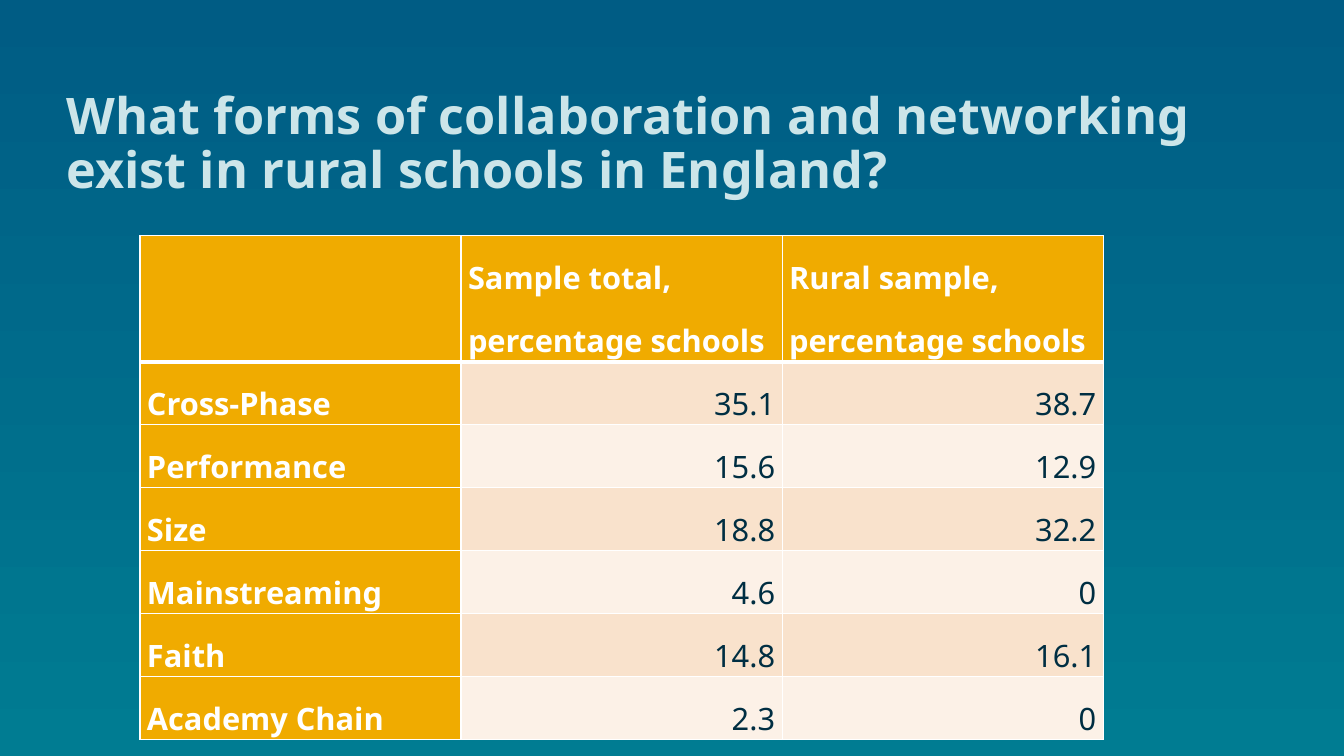
from lxml.etree import SubElement
from pptx import Presentation
from pptx.dml.color import RGBColor
from pptx.enum.text import MSO_ANCHOR, PP_ALIGN
from pptx.oxml.ns import qn
from pptx.util import Pt

FONT = "Noto Sans"
TOP = RGBColor(0x00, 0x5C, 0x84)
BASE = RGBColor(0x00, 0x7C, 0x92)
PALE = RGBColor(0xCC, 0xE5, 0xE9)
WHITE = RGBColor(0xFF, 0xFF, 0xFF)
INK = RGBColor(0x00, 0x2E, 0x42)
GOLD = RGBColor(0xF0, 0xAB, 0x00)
BANDS = [RGBColor(0xF9, 0xE2, 0xCC), RGBColor(0xFC, 0xF1, 0xE7)]

TITLE = "What forms of collaboration and networking exist in rural schools in England?"
ROWS = [
    ("", "Sample total, percentage schools", "Rural sample, percentage schools"),
    ("Cross-Phase", "35.1", "38.7"),
    ("Performance", "15.6", "12.9"),
    ("Size", "18.8", "32.2"),
    ("Mainstreaming", "4.6", "0"),
    ("Faith", "14.8", "16.1"),
    ("Academy Chain", "2.3", "0"),
]


def style(font, size, color, bold):
    font.name = FONT
    font.size = Pt(size)
    font.color.rgb = color
    font.bold = bold


def add_back(slide):
    fill = slide.background.fill
    fill.gradient()
    fill.gradient_angle = 270
    for stop, color, place in zip(fill.gradient_stops, (TOP, BASE), (0, 1)):
        stop.color.rgb = color
        stop.position = place


def add_title(slide, left, top, width, height):
    box = slide.shapes.add_textbox(Pt(left), Pt(top), Pt(width), Pt(height))
    frame = box.text_frame
    frame.word_wrap = True
    frame.vertical_anchor = MSO_ANCHOR.BOTTOM
    frame.margin_left = frame.margin_right = Pt(0)
    frame.margin_top = frame.margin_bottom = Pt(0)
    frame.text = TITLE
    para = frame.paragraphs[0]
    para.line_spacing = 0.9
    style(para.runs[0].font, 36, PALE, True)


def add_edges(cell, row):
    """Draw white cell borders, thick between the header and the body."""
    props = cell._tc.get_or_add_tcPr()
    for side in "LRTB":
        thick = (row, side) in ((0, "B"), (1, "T"))
        line = SubElement(props, qn(f"a:ln{side}"), w=str(Pt(3 if thick else 1)))
        fill = SubElement(line, qn("a:solidFill"))
        SubElement(fill, qn("a:srgbClr"), val=str(WHITE))


def fill_cell(cell, text, row, col):
    head = row == 0 or col == 0
    add_edges(cell, row)
    cell.fill.solid()
    cell.fill.fore_color.rgb = GOLD if head else BANDS[(row - 1) % 2]
    cell.margin_left = cell.margin_right = Pt(5)
    cell.margin_top = cell.margin_bottom = Pt(0)
    cell.text_frame.text = text
    para = cell.text_frame.paragraphs[0]
    para.line_spacing = 1.5
    para.alignment = PP_ALIGN.LEFT if head else PP_ALIGN.RIGHT
    for run in para.runs:
        style(run.font, 22, WHITE if head else INK, head)


def add_grid(slide, left, top, width, height):
    """Place the table; its header is as tall as two body rows."""
    count = len(ROWS[0])
    frame = slide.shapes.add_table(
        len(ROWS), count, Pt(left), Pt(top), Pt(width), Pt(height))
    table = frame.table
    for col in table.columns:
        col.width = Pt(width / count)
    unit = height / (len(ROWS) + 1)
    for r, texts in enumerate(ROWS):
        table.rows[r].height = Pt(unit * (2 if r == 0 else 1))
        for c, text in enumerate(texts):
            fill_cell(table.cell(r, c), text, r, c)


def main():
    deck = Presentation()
    deck.slide_width = Pt(960)
    deck.slide_height = Pt(540)
    slide = deck.slides.add_slide(deck.slide_layouts[6])
    add_back(slide)
    add_title(slide, 47.5, 36.7, 885, 106)
    add_grid(slide, 100, 168.5, 688, 360)
    deck.save("out.pptx")


if __name__ == "__main__":
    main()
